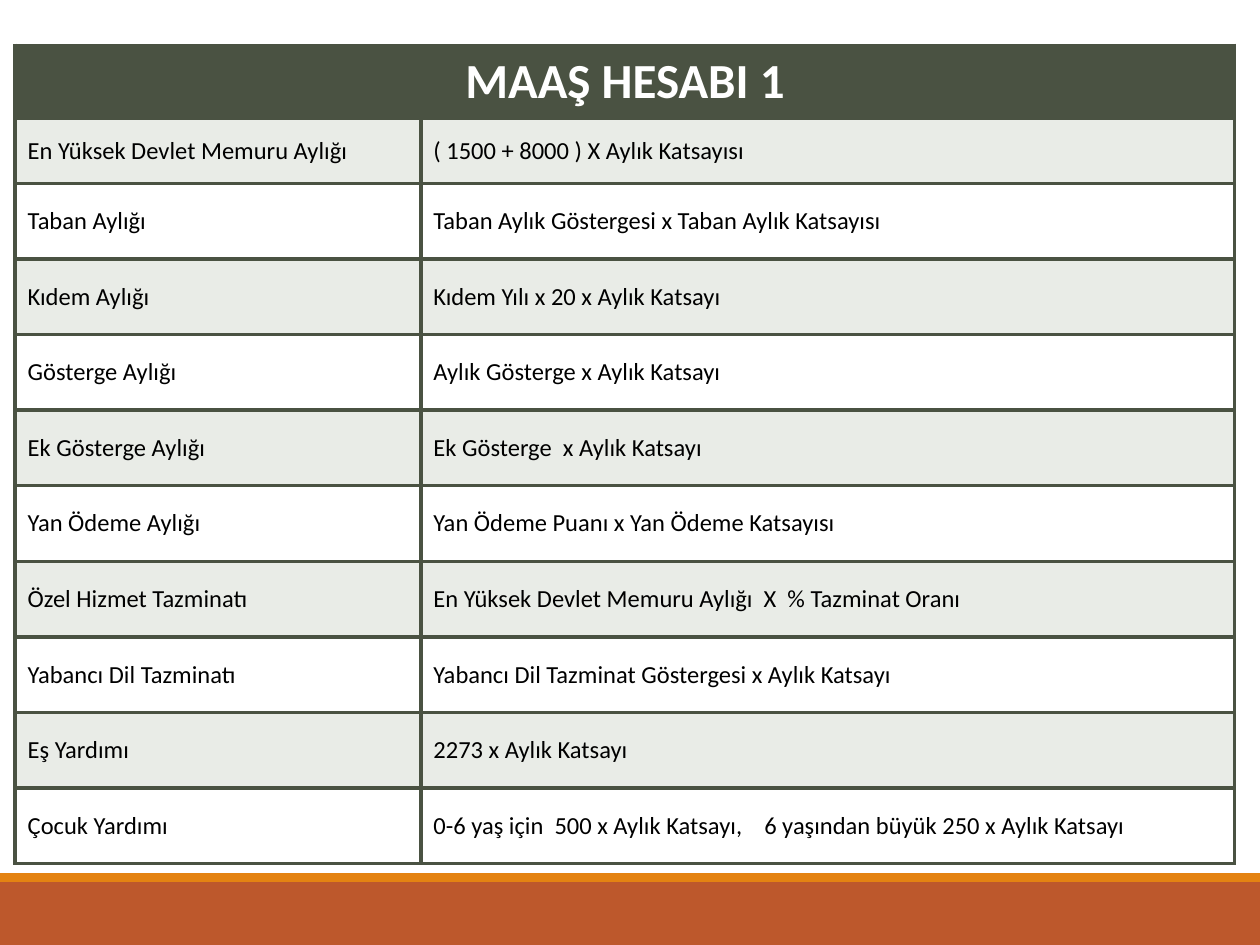
from dataclasses import dataclass

from lxml import etree
from pptx import Presentation
from pptx.dml.color import RGBColor
from pptx.enum import shapes, text
from pptx.oxml.ns import qn
from pptx.util import Inches, Pt


@dataclass(frozen=True)
class Theme:
    font: str = "Calibri"
    head: int = 28
    body: int = 14
    edge: float = 2.25
    tint: int = 20  # percent opacity of the banded rows
    dark: str = "4A5242"
    sage: str = "94A088"
    rust: str = "BD582C"
    amber: str = "E48312"
    white: str = "FFFFFF"
    black: str = "000000"


@dataclass(frozen=True)
class Bar:
    top: float
    height: float
    color: str


@dataclass(frozen=True)
class Item:
    name: str
    rule: str


THEME = Theme()
WIDE, HIGH = 10, 7.5
COLS = (3.22, 6.46)
HEAD_ROW, FIRST_ROW, ROW = 0.55, 0.52, 0.6
BARS = (Bar(7, 0.5, THEME.rust), Bar(6.93, 0.07, THEME.amber))
TITLE = "MAAŞ HESABI 1"
ITEMS = (
    Item("En Yüksek Devlet Memuru Aylığı", "( 1500 + 8000 ) X Aylık Katsayısı"),
    Item("Taban Aylığı", "Taban Aylık Göstergesi x Taban Aylık Katsayısı"),
    Item("Kıdem Aylığı", "Kıdem Yılı x 20 x Aylık Katsayı"),
    Item("Gösterge Aylığı", "Aylık Gösterge x Aylık Katsayı"),
    Item("Ek Gösterge Aylığı", "Ek Gösterge  x Aylık Katsayı"),
    Item("Yan Ödeme Aylığı", "Yan Ödeme Puanı x Yan Ödeme Katsayısı"),
    Item("Özel Hizmet Tazminatı",
         "En Yüksek Devlet Memuru Aylığı  X  % Tazminat Oranı"),
    Item("Yabancı Dil Tazminatı",
         "Yabancı Dil Tazminat Göstergesi x Aylık Katsayı"),
    Item("Eş Yardımı", "2273 x Aylık Katsayı"),
    Item("Çocuk Yardımı",
         "0-6 yaş için  500 x Aylık Katsayı,    6 yaşından büyük 250 x Aylık Katsayı"),
)


def draw_bar(slide, bar: Bar) -> None:
    box = slide.shapes.add_shape(
        shapes.MSO_SHAPE.RECTANGLE,
        0, Inches(bar.top), Inches(WIDE), Inches(bar.height))
    box.shadow.inherit = False
    box.fill.solid()
    box.fill.fore_color.rgb = RGBColor.from_string(bar.color)
    box.line.fill.background()


def write(cell, words: str, size: int, color: str, bold: bool = False) -> None:
    run = cell.text_frame.paragraphs[0].add_run()
    run.text = words
    run.font.name = THEME.font
    run.font.size = Pt(size)
    run.font.bold = bold
    run.font.color.rgb = RGBColor.from_string(color)


def paint(cell, color: str, alpha: int = 100) -> None:
    cell.fill.solid()
    cell.fill.fore_color.rgb = RGBColor.from_string(color)
    if alpha < 100:
        tone = next(cell.fill._xPr.iter(qn("a:srgbClr")))
        etree.SubElement(tone, qn("a:alpha"), val=str(alpha * 1000))


def frame(cell) -> None:
    """Border all four sides; the lines must come before the fill."""
    props = cell._tc.get_or_add_tcPr()
    for spot, side in enumerate(("lnL", "lnR", "lnT", "lnB")):
        line = etree.Element(qn(f"a:{side}"), w=str(Pt(THEME.edge)))
        fill = etree.SubElement(line, qn("a:solidFill"))
        etree.SubElement(fill, qn("a:srgbClr"), val=THEME.dark)
        props.insert(spot, line)


def draw_table(slide) -> None:
    rows = (HEAD_ROW, FIRST_ROW) + (ROW,) * (len(ITEMS) - 1)
    grid = slide.shapes.add_table(
        len(rows), len(COLS), Inches(0.12), Inches(0.36),
        Inches(sum(COLS)), Inches(sum(rows))).table
    for col, width in zip(grid.columns, COLS):
        col.width = Inches(width)
    for row, height in zip(grid.rows, rows):
        row.height = Inches(height)

    # Title row
    head = grid.cell(0, 0)
    head.merge(grid.cell(0, 1))
    write(head, TITLE, THEME.head, THEME.white, bold=True)
    head.text_frame.paragraphs[0].alignment = text.PP_ALIGN.CENTER
    for col in range(len(COLS)):
        paint(grid.cell(0, col), THEME.dark)

    # Pay items, every other row tinted
    for row, item in enumerate(ITEMS, 1):
        for col, words in enumerate((item.name, item.rule)):
            cell = grid.cell(row, col)
            cell.vertical_anchor = text.MSO_ANCHOR.MIDDLE
            write(cell, words, THEME.body, THEME.black)
            if row % 2:
                paint(cell, THEME.sage, THEME.tint)
            else:
                cell.fill.background()

    for cell in grid.iter_cells():
        frame(cell)


def main() -> None:
    deck = Presentation()
    deck.slide_width, deck.slide_height = Inches(WIDE), Inches(HIGH)
    slide = deck.slides.add_slide(deck.slide_layouts[6])
    for bar in BARS:
        draw_bar(slide, bar)
    draw_table(slide)
    deck.save("out.pptx")


if __name__ == "__main__":
    main()
